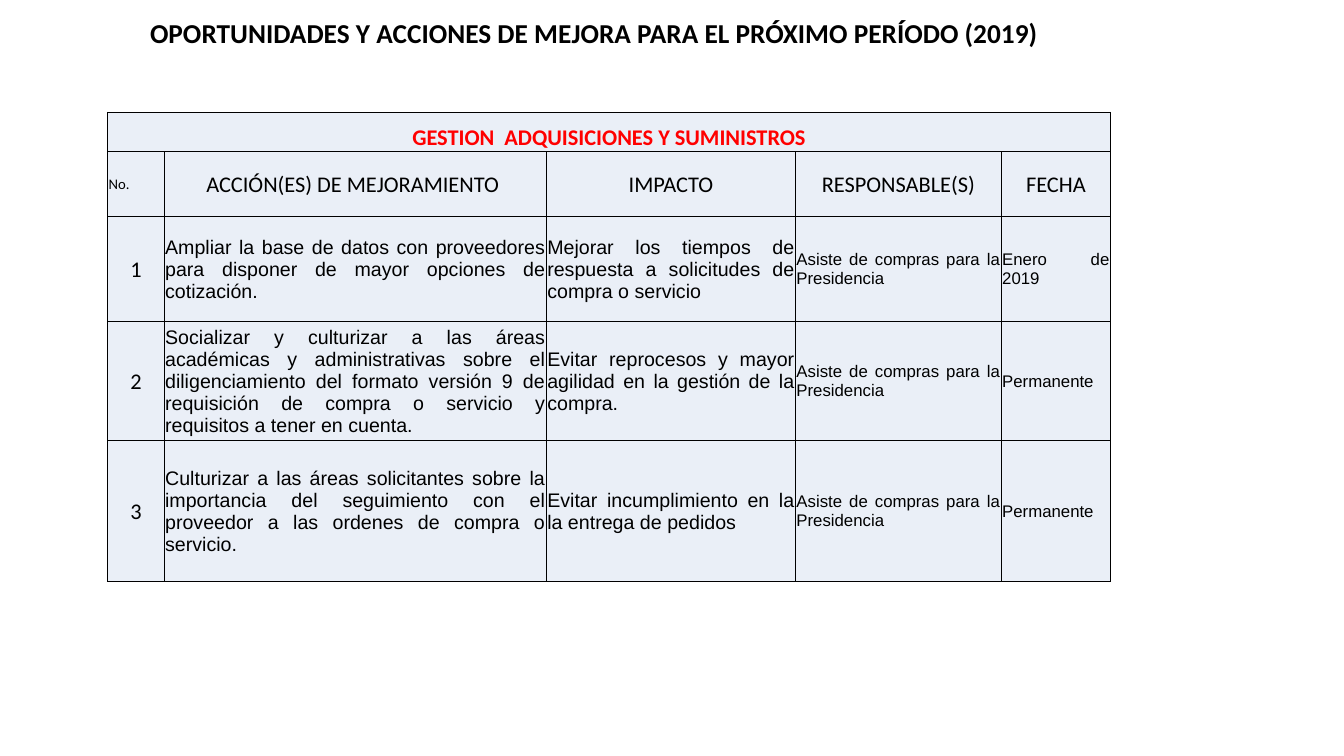
from pptx import Presentation
from pptx.dml.color import RGBColor
from pptx.enum.text import MSO_ANCHOR as Anchor, PP_ALIGN as Align
from pptx.oxml import parse_xml
from pptx.oxml.ns import nsdecls
from pptx.util import Pt

BLACK, RED, PALE_BLUE = "000000", "FF0000", "EAEFF7"
COL_WIDTHS = [40.3, 273, 178, 147, 78]
ROW_HEIGHTS = [28, 46.3, 75.2, 82.2, 100.8]
HEADINGS = ["No.", "ACCIÓN(ES) DE MEJORAMIENTO ", "IMPACTO", "RESPONSABLE(S)", "FECHA"]
BUYER = "Asiste de compras para la Presidencia"
ACTIONS = [
    ["1", "Ampliar la base de datos con proveedores para disponer de mayor "
     "opciones de cotización.",
     "Mejorar los tiempos de respuesta a solicitudes de compra o servicio",
     BUYER, "Enero de 2019"],
    ["2", "Socializar y culturizar a las áreas académicas y administrativas "
     "sobre el diligenciamiento del formato versión 9 de requisición de compra "
     "o servicio y requisitos a tener en cuenta.",
     "Evitar reprocesos y mayor agilidad en la gestión de la compra.",
     BUYER, "Permanente"],
    ["3", "Culturizar a las áreas solicitantes sobre la importancia del "
     "seguimiento con el proveedor a las ordenes de compra o servicio.",
     "Evitar incumplimiento en la la entrega de pedidos",
     BUYER, "Permanente"],
]
HEADING_STYLES = [("Calibri", 10.5, Align.JUSTIFY)] + [("Calibri", 16, Align.CENTER)] * 4
ACTION_STYLES = ([("Calibri", 16, Align.CENTER)] + [("Arial", 14, Align.JUSTIFY)] * 2
                 + [("Arial", 12, Align.JUSTIFY)] * 2)


def rgb(color):
    """Return the colour for a hex string."""
    return RGBColor.from_string(color)


def write(tf, text, style, color=BLACK, bold=False):
    """Put one formatted paragraph in a text frame."""
    name, size, align = style
    tf.text = text
    tf.word_wrap = True
    p = tf.paragraphs[0]
    p.alignment = align
    font = p.runs[0].font
    font.name, font.size, font.bold = name, Pt(size), bold
    font.color.rgb = rgb(color)


def add_title(s, text):
    """Add the slide heading."""
    sp = s.shapes.add_textbox(Pt(41.8), Pt(3.6), Pt(765.4), Pt(39.6))
    write(sp.text_frame, text, ("Calibri", 19.5, Align.CENTER), bold=True)
    sp.text_frame.vertical_anchor = Anchor.MIDDLE


def format_cell(cell):
    """Give a cell its borders, fill, margins and anchor."""
    tcPr = cell._tc.get_or_add_tcPr()
    for side in "LRTB":
        tcPr.append(parse_xml(
            f'<a:ln{side} {nsdecls("a")} w="{Pt(1)}"><a:solidFill>'
            f'<a:srgbClr val="{BLACK}"/></a:solidFill></a:ln{side}>'))
    cell.fill.solid()
    cell.fill.fore_color.rgb = rgb(PALE_BLUE)
    cell.margin_left = cell.margin_right = cell.margin_top = Pt(0.7)
    cell.margin_bottom = 0
    cell.vertical_anchor = Anchor.MIDDLE


def fill_row(table, row, texts, styles):
    """Write the texts of one table row."""
    for col, (text, style) in enumerate(zip(texts, styles)):
        write(table.cell(row, col).text_frame, text, style)


def add_action_table(s):
    """Add the table of improvement actions."""
    table = s.shapes.add_table(
        len(ROW_HEIGHTS), len(COL_WIDTHS), Pt(77), Pt(80.3),
        Pt(sum(COL_WIDTHS)), Pt(sum(ROW_HEIGHTS))).table
    for column, width in zip(table.columns, COL_WIDTHS):
        column.width = Pt(width)
    for row, height in zip(table.rows, ROW_HEIGHTS):
        row.height = Pt(height)
    for cell in table.iter_cells():
        format_cell(cell)
    banner = table.cell(0, 0)
    banner.merge(table.cell(0, len(COL_WIDTHS) - 1))
    banner.vertical_anchor = Anchor.BOTTOM
    write(banner.text_frame, "GESTION  ADQUISICIONES Y SUMINISTROS",
          ("Calibri", 16, Align.CENTER), RED, True)
    fill_row(table, 1, HEADINGS, HEADING_STYLES)
    for row, texts in enumerate(ACTIONS, 2):
        fill_row(table, row, texts, ACTION_STYLES)


def main():
    """Build and save the slide."""
    prs = Presentation()
    prs.slide_width, prs.slide_height = Pt(960), Pt(540)
    s = prs.slides.add_slide(prs.slide_layouts[6])
    add_title(s, "OPORTUNIDADES Y ACCIONES DE MEJORA PARA EL PRÓXIMO PERÍODO (2019)")
    add_action_table(s)
    prs.save("out.pptx")


if __name__ == "__main__":
    main()
